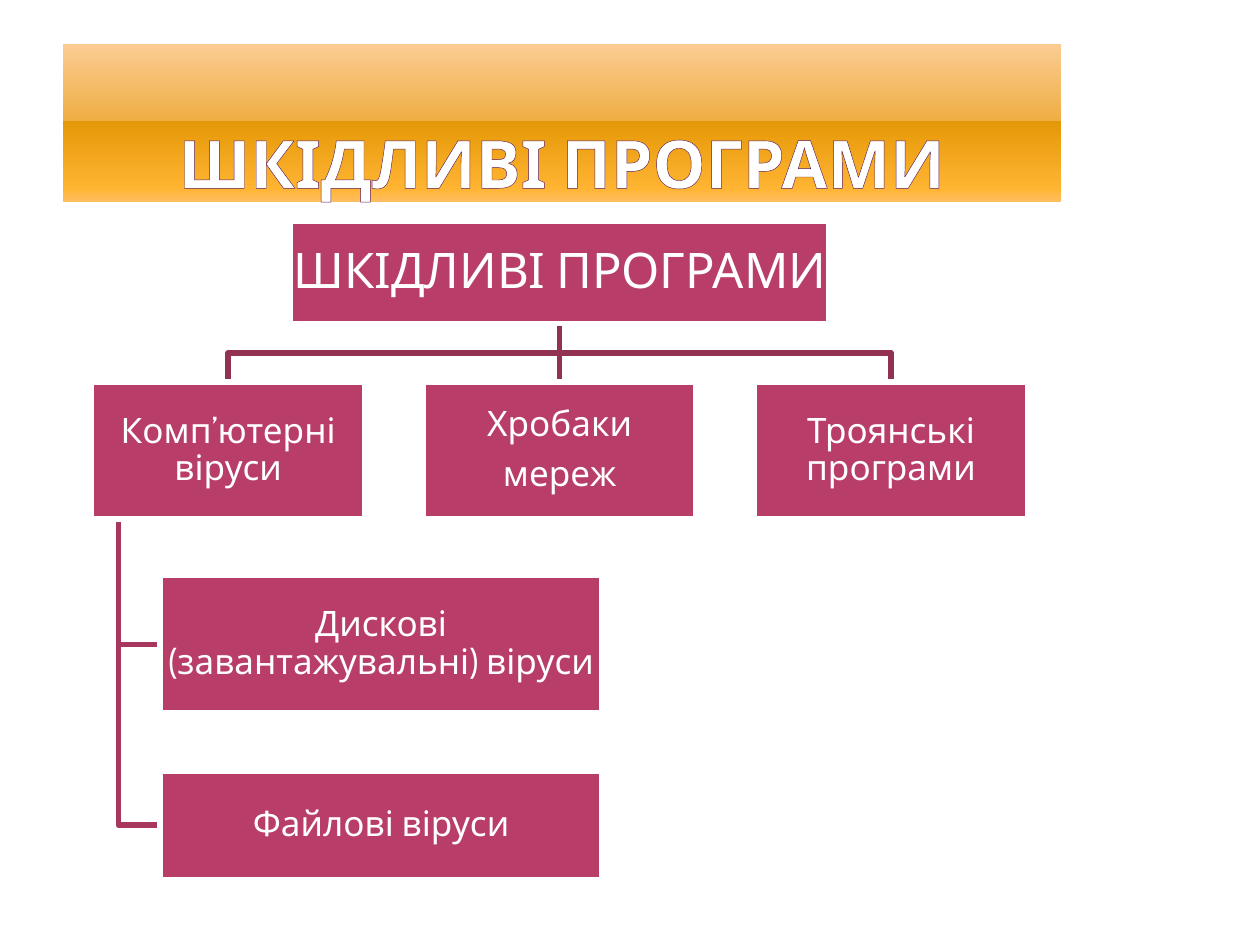
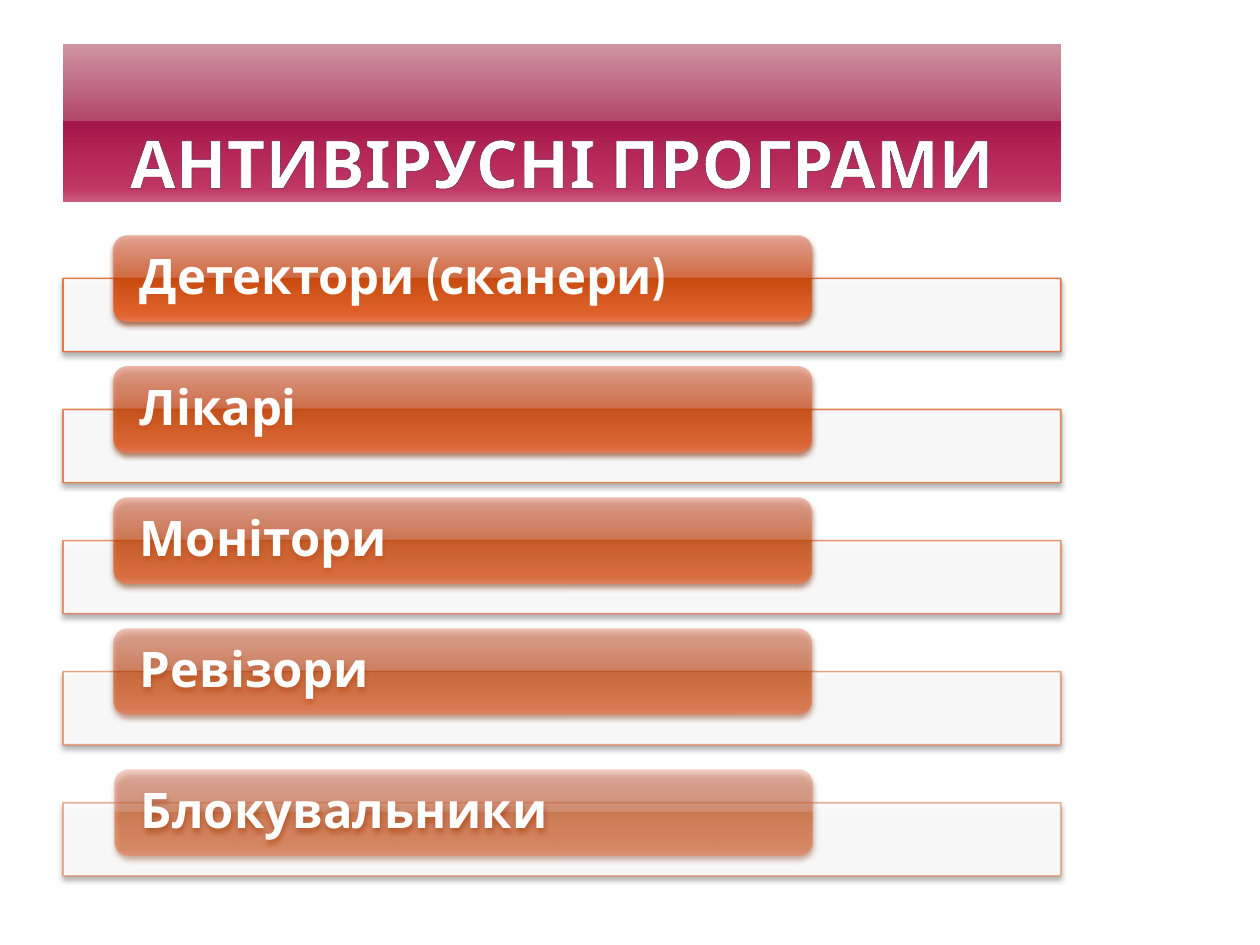
from dataclasses import dataclass

from lxml.etree import SubElement
from pptx import Presentation
from pptx.dml.color import RGBColor
from pptx.enum.shapes import MSO_CONNECTOR, MSO_SHAPE
from pptx.enum.text import MSO_ANCHOR, PP_ALIGN
from pptx.oxml import parse_xml
from pptx.oxml.ns import nsdecls, qn
from pptx.util import Pt


@dataclass(frozen=True)
class Theme:
    """Colours, type sizes and line widths shared by the slides."""

    font: str = "Cabin"
    white: str = "FFFFFF"
    title_outline: str = "5E1A50"
    node: str = "B83D68"
    branch: str = "933153"
    twig: str = "A7375E"
    panel_line: str = "DE6C36"
    panel_shadow: str = "9D9D9D"
    pill_shadow: str = "894321"
    gold: tuple = ("FBCC93", "EFAE43", "E59807", "FFB432", "FFBE5F")
    berry: tuple = ("CE94A2", "B34869", "A61749", "C13764", "CA5D7C")
    orange: tuple = ("E7A493", "D66B42", "CC4809", "E9642C", "F07B55")
    gloss_stops: tuple = (0, 49, 49, 92, 100)
    title_size: float = 38
    heading_size: float = 28
    node_size: float = 20
    tree_line: float = 3.15
    panel_line_width: float = 0.9


THEME = Theme()
BAND_LEFT, BAND_WIDTH = 36, 570.2


def rgb(code):
    """Turn a hex code into a colour."""
    return RGBColor.from_string(code)


def set_alpha(colour, percent):
    """Make a colour element partly transparent."""
    SubElement(colour, qn("a:alpha"), val=str(percent * 1000))


def add_block(page, kind, left, top, width, height):
    """Add a preset shape without line or shadow."""
    block = page.shapes.add_shape(kind, Pt(left), Pt(top), Pt(width), Pt(height))
    block.shadow.inherit = False
    block.line.fill.background()
    return block


def fill_gloss(block, colours, alpha=100):
    """Fill a shape with a glossy gradient running downwards."""
    block.fill.gradient()
    block.fill.gradient_angle = 270
    stops = block.element.spPr.find(f"{qn('a:gradFill')}/{qn('a:gsLst')}")
    stops.clear()
    for position, code in zip(THEME.gloss_stops, colours):
        stop = SubElement(stops, qn("a:gs"), pos=str(position * 1000))
        colour = SubElement(stop, qn("a:srgbClr"), val=code)
        if alpha < 100:
            set_alpha(colour, alpha)


def drop_shadow(block, code):
    """Put a soft shadow just below a shape."""
    effects = block.element.spPr.find(qn("a:effectLst"))
    shadow = SubElement(effects, qn("a:outerShdw"), blurRad=str(Pt(3.1)),
                        dist=str(Pt(2)), dir="5400000", rotWithShape="0")
    set_alpha(SubElement(shadow, qn("a:srgbClr"), val=code), 83)


def write(block, text, size, bold=False, align=PP_ALIGN.CENTER,
          anchor=MSO_ANCHOR.MIDDLE, side=1, edge=1):
    """Write white text into a shape, one paragraph per line."""
    frame = block.text_frame
    frame.word_wrap = True
    frame.vertical_anchor = anchor
    frame.margin_left = frame.margin_right = Pt(side)
    frame.margin_top = frame.margin_bottom = Pt(edge)
    frame.text = text
    for paragraph in frame.paragraphs:
        paragraph.alignment = align
        for span in paragraph.runs:
            span.font.name = THEME.font
            span.font.size = Pt(size)
            span.font.bold = bold
            span.font.color.rgb = rgb(THEME.white)
    return frame.paragraphs


def space_lines(paragraphs, size):
    """Tighten the lines and leave a gap after each paragraph."""
    for paragraph in paragraphs:
        paragraph.line_spacing = 0.9
        paragraph.space_after = Pt(size * 0.35)


def add_title(page, text, colours):
    """Add the glossy title band with outlined text."""
    band = add_block(page, MSO_SHAPE.RECTANGLE, BAND_LEFT, 25.2, BAND_WIDTH, 90)
    fill_gloss(band, colours)
    paragraphs = write(band, text, THEME.title_size, bold=True,
                       anchor=MSO_ANCHOR.BOTTOM, side=3.6, edge=0)
    outline = parse_xml(
        f'<a:ln {nsdecls("a")} w="{Pt(0.04)}"><a:solidFill>'
        f'<a:srgbClr val="{THEME.title_outline}"/></a:solidFill></a:ln>')
    paragraphs[0].runs[0]._r.get_or_add_rPr().insert(0, outline)


def add_node(page, text, left, top, width, height, size=THEME.node_size):
    """Add a box of the tree."""
    node = add_block(page, MSO_SHAPE.RECTANGLE, left, top, width, height)
    node.fill.solid()
    node.fill.fore_color.rgb = rgb(THEME.node)
    style_line(node, THEME.white)
    space_lines(write(node, text, size), size)
    return node


def style_line(shape, code, width=THEME.tree_line):
    """Set the colour and width of a line."""
    shape.line.color.rgb = rgb(code)
    shape.line.width = Pt(width)


def add_bend(page, code, *points):
    """Draw an open bent line through the points."""
    start, *rest = [(Pt(x), Pt(y)) for x, y in points]
    builder = page.shapes.build_freeform(*start)
    builder.add_line_segments(rest, close=False)
    bend = builder.convert_to_shape()
    bend.fill.background()
    bend.shadow.inherit = False
    style_line(bend, code)


def add_straight(page, code, x, top, bottom):
    """Draw a vertical connector."""
    line = page.shapes.add_connector(
        MSO_CONNECTOR.STRAIGHT, Pt(x), Pt(top), Pt(x), Pt(bottom))
    SubElement(line.element.spPr, qn("a:effectLst"))
    style_line(line, code)
    return line


def add_entry(page, text, panel_top, alpha, pill_left, lift):
    """Add a panel with a labelled pill over its upper edge."""
    panel = add_block(page, MSO_SHAPE.RECTANGLE, BAND_LEFT, panel_top, BAND_WIDTH, 41.8)
    panel.fill.solid()
    panel.fill.fore_color.rgb = rgb(THEME.white)
    style_line(panel, THEME.panel_line, THEME.panel_line_width)
    fill, line = panel.element.spPr.iter(qn("a:srgbClr"))
    set_alpha(fill, 90)
    set_alpha(line, alpha)
    drop_shadow(panel, THEME.panel_shadow)

    pill = add_block(page, MSO_SHAPE.ROUNDED_RECTANGLE,
                     pill_left, panel_top - lift, 399, 49)
    fill_gloss(pill, THEME.orange, alpha)
    drop_shadow(pill, THEME.pill_shadow)
    size = THEME.heading_size
    space_lines(write(pill, text, size, bold=True, align=PP_ALIGN.LEFT,
                      side=12.7, edge=0), size)


def build_malware(page):
    """Build the tree of malicious programs."""
    add_title(page, "ШКІДЛИВІ ПРОГРАМИ", THEME.gold)
    middle, root_top, root_width, root_height = 319.8, 126.7, 307.4, 58.3
    kind_top, kind_width, kind_height, kind_step = 218.2, 156.2, 78.5, 189.4
    root_bottom, kind_bottom = root_top + root_height, kind_top + kind_height
    fork = (root_bottom + kind_top) / 2
    trunk, twig_left, twig_width = 67.7, 91.4, 252.7
    centres = [middle + step * kind_step for step in (-1, 0, 1)]
    kinds = ("Комп’ютерні віруси", "Хробаки\nмереж", "Троянські програми")
    twigs = (("Дискові (завантажувальні) віруси", 329, 78.5),
             ("Файлові віруси", 440.6, 61.9))

    for x in (centres[0], centres[2]):
        add_bend(page, THEME.branch, (middle, root_bottom), (middle, fork),
                 (x, fork), (x, kind_top))
    stem = add_straight(page, THEME.branch, middle, root_bottom, kind_top)
    for _, top, height in twigs:
        y = top + height / 2
        add_bend(page, THEME.twig, (trunk, kind_bottom), (trunk, y), (twig_left, y))

    root = add_node(page, "ШКІДЛИВІ ПРОГРАМИ", middle - root_width / 2, root_top,
                    root_width, root_height, THEME.heading_size)
    nodes = [add_node(page, text, x - kind_width / 2, kind_top, kind_width, kind_height)
             for text, x in zip(kinds, centres)]
    for text, top, height in twigs:
        add_node(page, text, twig_left, top, twig_width, height)
    stem.begin_connect(root, 2)
    stem.end_connect(nodes[1], 0)


def build_antivirus(page):
    """Build the list of antivirus programs."""
    add_title(page, "АНТИВІРУСНІ ПРОГРАМИ", THEME.berry)
    entries = (("Детектори (сканери)", 64.8, 24.5), ("Лікарі", 64.8, 24.5),
               ("Монітори", 64.8, 24.5), ("Ревізори", 64.8, 24.5),
               ("Блокувальники", 65.5, 18.7))
    for index, (text, pill_left, lift) in enumerate(entries):
        add_entry(page, text, 159.1 + 74.9 * index, 90 - 10 * index, pill_left, lift)


def main():
    """Build both slides and save the deck."""
    deck = Presentation()
    deck.slide_width, deck.slide_height = Pt(720), Pt(540)
    for build in (build_malware, build_antivirus):
        build(deck.slides.add_slide(deck.slide_layouts[6]))
    deck.save("out.pptx")


if __name__ == "__main__":
    main()
